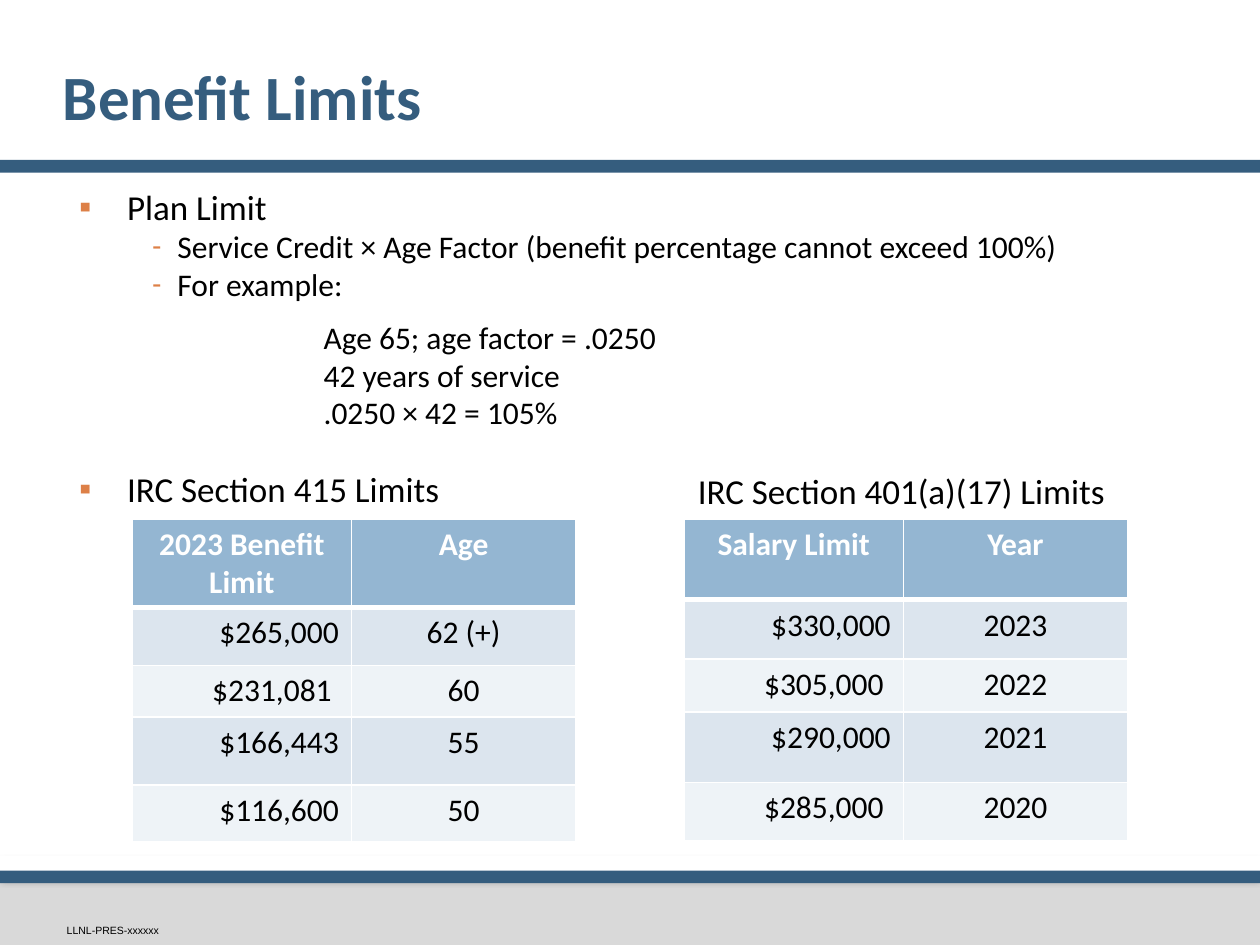
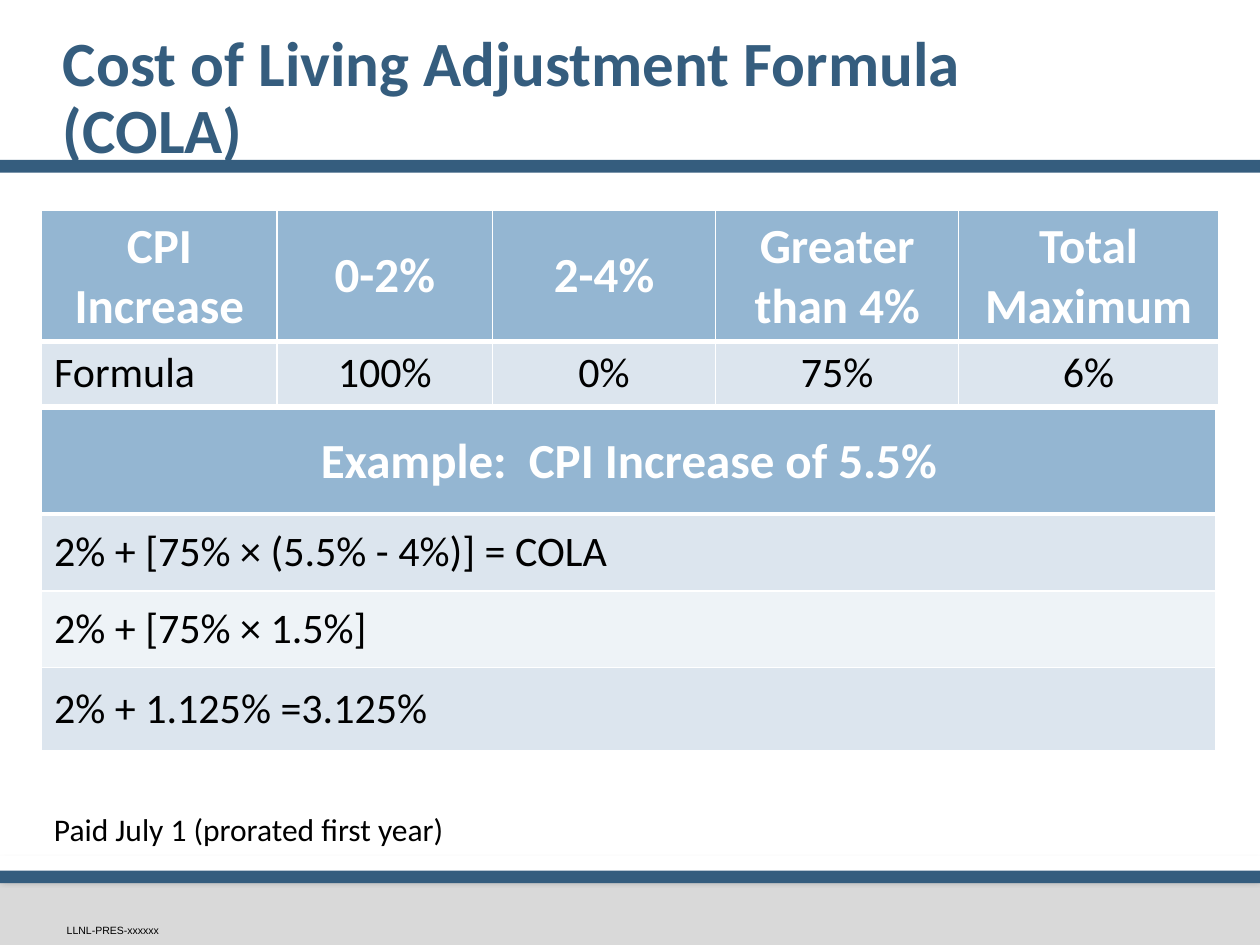
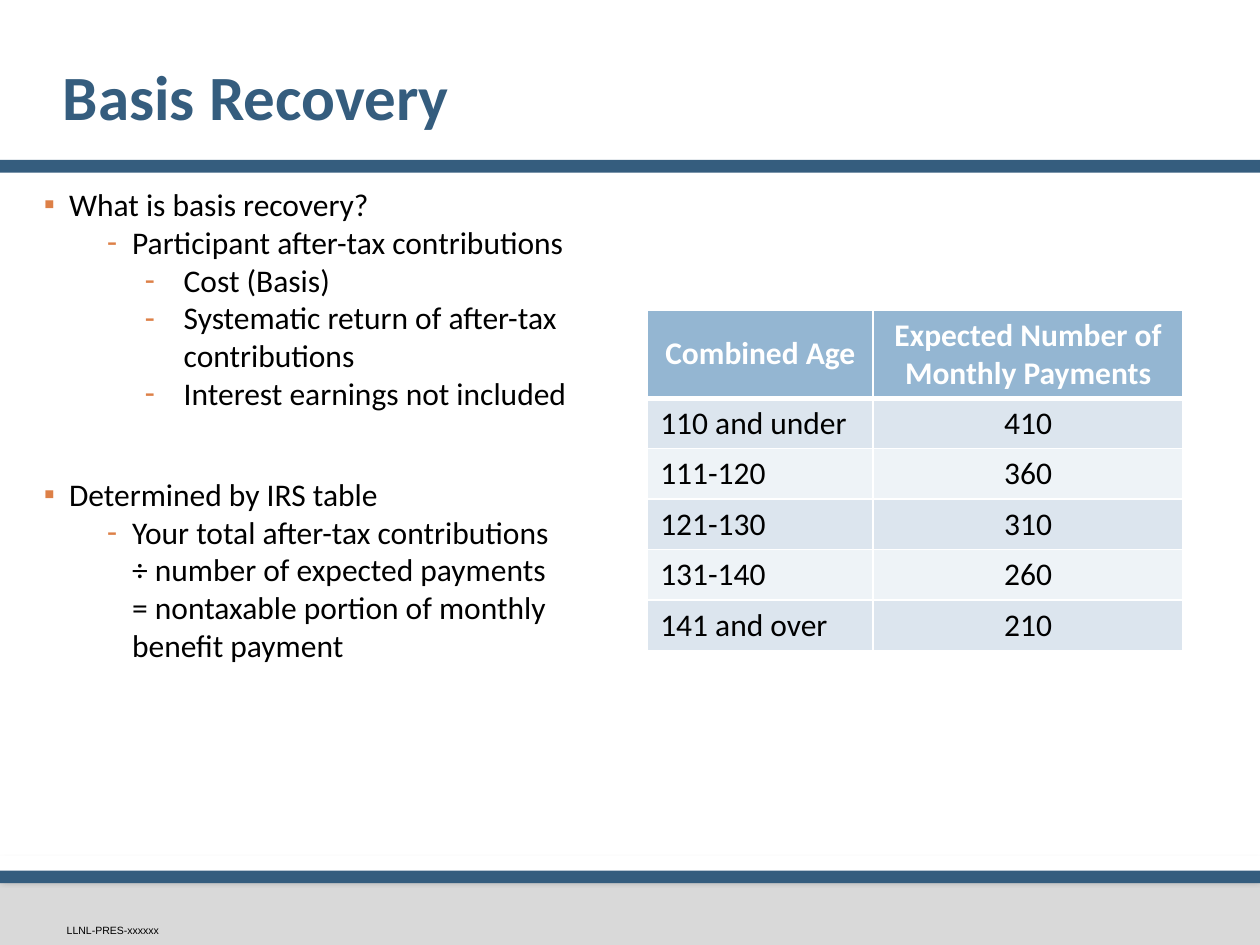
from dataclasses import dataclass

from lxml import etree
from pptx import Presentation
from pptx.dml.color import RGBColor
from pptx.enum.shapes import MSO_SHAPE
from pptx.enum.text import MSO_ANCHOR, PP_ALIGN
from pptx.oxml.ns import qn
from pptx.util import Inches, Pt

RECT = MSO_SHAPE.RECTANGLE
TOP, MID, LOW = MSO_ANCHOR.TOP, MSO_ANCHOR.MIDDLE, MSO_ANCHOR.BOTTOM
LEFT, MID_X, RIGHT = PP_ALIGN.LEFT, PP_ALIGN.CENTER, PP_ALIGN.RIGHT
COLS, ROWS = 100, 75


@dataclass(frozen=True)
class Theme:
    blue: str = "355D7E"
    gray: str = "D9D9D9"
    white: str = "FFFFFF"
    black: str = "000000"
    mark: str = "DD8047"
    head: str = "94B6D2"
    bands: tuple = ("DCE5EE", "EEF3F7")
    font: str = "Calibri"
    small: str = "Arial"
    title: int = 36
    big: int = 28
    large: int = 24
    lead: int = 20
    body: int = 18
    foot: int = 6


@dataclass(frozen=True)
class Item:
    """One paragraph: margin and hang in inches, spacing in points."""
    text: str
    margin: float = 0
    hang: float = 0
    bullet: str = ""
    level: int = 0
    size: int = Theme.body
    before: int = 0
    lines: float = 1.0
    scale: int = 100


def node(root, tag, **attrs):
    return etree.SubElement(root, qn(tag), {k: str(v) for k, v in attrs.items()})


class Deck:
    def __init__(self, theme):
        self.theme = theme
        self.prs = Presentation()
        self.prs.slide_width, self.prs.slide_height = Inches(10), Inches(7.5)
        self.slide = None

    def grid(self, col, row, wide, high):
        """Turn columns and rows into lengths on the slide."""
        unit_x = self.prs.slide_width / COLS
        unit_y = self.prs.slide_height / ROWS
        return (round(col * unit_x), round(row * unit_y),
                round(wide * unit_x), round(high * unit_y))

    def page(self, title):
        t = self.theme
        self.slide = self.prs.slides.add_slide(self.prs.slide_layouts[6])
        self.band(69.5, 5.5, t.gray, (38, 3.1, 2))
        self.band(67.9, 1.6, t.white, (25, 4, 3))
        self.band(69.1, 1, t.blue)
        self.band(12.7, 1, t.blue)
        self.text((5.3, 73.3, 9.6, 1), [Item("LLNL-PRES-xxxxxx", size=t.foot)],
                  font=t.small, anchor=LOW, pads=(0, 0, 0, 0))
        self.text((5, 2.4, 90, 11), [Item(title, size=t.title, lines=Pt(38.2))],
                  color=t.blue, bold=True, anchor=MID, pads=(0, 0.05, 0.05, 0.05))

    def band(self, row, high, color, shade=None):
        """Draw a full-width bar; shade is opacity, blur and distance."""
        bar = self.slide.shapes.add_shape(RECT, *self.grid(0, row, COLS, high))
        bar.fill.solid()
        bar.fill.fore_color.rgb = RGBColor.from_string(color)
        bar.line.fill.background()
        bar.shadow.inherit = False
        if shade:
            alpha, blur, dist = shade
            glow = node(bar._element.spPr.find(qn("a:effectLst")), "a:outerShdw",
                        blurRad=Pt(blur), dist=Pt(dist), dir=90 * 60000, rotWithShape=0)
            tint = node(glow, "a:srgbClr", val=self.theme.black)
            node(tint, "a:alpha", val=alpha * 1000)

    def style(self, para, size, color, bold=False, font=None):
        for run in para.runs:
            run.font.name = font or self.theme.font
            run.font.size = Pt(size)
            run.font.bold = bold
            run.font.color.rgb = RGBColor.from_string(color)

    def text(self, place, items, color=None, bold=False, font=None,
             anchor=TOP, pads=(0.1, 0.05, 0.1, 0.05)):
        frame = self.slide.shapes.add_textbox(*self.grid(*place)).text_frame
        frame.word_wrap = True
        frame.vertical_anchor = anchor
        (frame.margin_left, frame.margin_top,
         frame.margin_right, frame.margin_bottom) = map(Inches, pads)
        for i, item in enumerate(items):
            para = frame.add_paragraph() if i else frame.paragraphs[0]
            para.text = item.text
            para.level = item.level
            self.bullet(para, item)
            para.line_spacing = item.lines
            para.space_before = Pt(item.before)
            self.style(para, item.size, color or self.theme.black, bold, font)

    def bullet(self, para, item):
        props = para._p.get_or_add_pPr()
        props.set("marL", str(Inches(item.margin)))
        props.set("indent", str(Inches(-item.hang)))
        if item.bullet:
            node(node(props, "a:buClr"), "a:srgbClr", val=self.theme.mark)
            node(props, "a:buSzPct", val=item.scale * 1000)
            node(props, "a:buFont", typeface=self.theme.small)
            node(props, "a:buChar", char=item.bullet)
        else:
            node(props, "a:buNone")

    def table(self, place, wides, highs, data, aligns, sizes=None, anchors=(TOP, TOP)):
        """Draw a table; sizes and anchors hold a value for head and body."""
        t = self.theme
        sizes = sizes or (t.body, t.body)
        box = self.grid(*place, sum(wides), sum(highs))
        grid = self.slide.shapes.add_table(len(data), len(wides), *box).table
        for col, wide in zip(grid.columns, wides):
            col.width = self.grid(0, 0, wide, 0)[2]
        for r, (row, high) in enumerate(zip(data, highs)):
            grid.rows[r].height = self.grid(0, 0, 0, high)[3]
            part = min(r, 1)
            for c, value in enumerate(row):
                cell = grid.cell(r, c)
                cell.text_frame.text = value
                cell.vertical_anchor = anchors[part]
                cell.fill.solid()
                cell.fill.fore_color.rgb = RGBColor.from_string(
                    t.bands[(r - 1) % 2] if r else t.head)
                self.edges(cell, 1 if r else 3)
                para = cell.text_frame.paragraphs[0]
                para.alignment = aligns[c] if r else MID_X
                self.style(para, sizes[part], t.black if r else t.white, bold=not r)

    def edges(self, cell, base):
        """Give a cell white borders, with the bottom one base points wide."""
        props = cell._tc.get_or_add_tcPr()
        for i, (side, wide) in enumerate(zip("LRTB", (1, 1, 1, base))):
            line = node(props, f"a:ln{side}", w=Pt(wide))
            node(node(line, "a:solidFill"), "a:srgbClr", val=self.theme.white)
            props.insert(i, line)


def limits(deck):
    lead = deck.theme.lead
    top = dict(margin=0.5, hang=0.38, bullet="▪", size=lead)
    sub = dict(margin=0.9, hang=0.2, bullet="-", level=1, scale=90)
    case = dict(margin=2.06, level=2)
    deck.page("Benefit Limits")
    deck.text((4.1, 14.2, 85.9, 41.3), [
        Item("Plan Limit", **top),
        Item("Service Credit × Age Factor (benefit percentage cannot exceed 100%)", **sub),
        Item("For example:", **sub),
        Item("Age 65; age factor = .0250", lines=1.4, **case),
        Item("42 years of service", **case),
        Item(".0250 × 42 = 105%", **case),
        Item("IRC Section 415 Limits", before=21, **top),
    ])
    deck.text((54.4, 36.8, 36, 4.4), [Item("IRC Section 401(a)(17) Limits", size=lead)])
    wides, aligns = (17.4, 17.8), (RIGHT, MID_X)
    deck.table((10.5, 41.2), wides, (6.9, 4.6, 4.1, 5.4, 4.5), [
        ("2023 Benefit Limit", "Age"),
        ("$265,000", "62 (+)"),
        ("$231,081 ", "60"),
        ("$166,443", "55"),
        ("$116,600", "50"),
    ], aligns)
    deck.table((54.3, 41.2), wides, (6.4, 4.7, 4.2, 5.6, 4.6), [
        ("Salary Limit", "Year"),
        ("$330,000", "2023"),
        ("$305,000 ", "2022"),
        ("$290,000", "2021"),
        ("$285,000 ", "2020"),
    ], aligns)


def cola(deck):
    sizes = (deck.theme.big, deck.theme.large)
    deck.page("Cost of Living Adjustment Formula\v(COLA)")
    deck.table((3.3, 16.7), (18.7, 17.1, 17.7, 19.3, 20.6), (10.4, 4.9), [
        ("CPI Increase", "0-2%", "2-4%", "Greater than 4%", "Total Maximum"),
        ("Formula", "100%", "0%", "75%", "6%"),
    ], (LEFT,) + (MID_X,) * 4, sizes, (MID, TOP))
    deck.table((3.3, 32.5), (93.2,), (8.3, 6.1, 6.1, 6.6), [
        ("Example:  CPI Increase of 5.5%",),
        ("2% + [75% × (5.5% - 4%)] = COLA",),
        ("2% + [75% × 1.5%]",),
        ("2% + 1.125% =3.125%",),
    ], (LEFT,), sizes, (MID, MID))
    deck.text((3.3, 63.8, 42.5, 4), [Item("Paid July 1 (prorated first year)")])


def basis(deck):
    top = dict(margin=0.2, hang=0.2, bullet="▪")
    sub = dict(margin=0.7, hang=0.2, bullet="-", level=1)
    deep = dict(margin=1.11, hang=0.31, bullet="-", level=3)
    deck.page("Basis Recovery")
    deck.text((2.5, 14.2, 43.5, 53), [
        Item("What is basis recovery?", **top),
        Item("Participant after-tax contributions", **sub),
        Item("Cost (Basis)", **deep),
        Item("Systematic return of after-tax contributions", **deep),
        Item("Interest earnings not included", **deep),
        Item("Determined by IRS table", before=36, **top),
        Item("Your total after-tax contributions ÷ number of expected payments "
             "= nontaxable portion of monthly benefit payment", **sub),
    ])
    deck.table((51.4, 24.6), (17.9, 24.6), (7, 4, 4, 4, 4, 4), [
        ("Combined Age", "Expected Number of Monthly Payments"),
        ("110 and under", "410"),
        ("111-120", "360"),
        ("121-130", "310"),
        ("131-140", "260"),
        ("141 and over", "210"),
    ], (LEFT, MID_X), anchors=(MID, TOP))


def main():
    deck = Deck(Theme())
    for build in (limits, cola, basis):
        build(deck)
    deck.prs.save("out.pptx")


if __name__ == "__main__":
    main()
